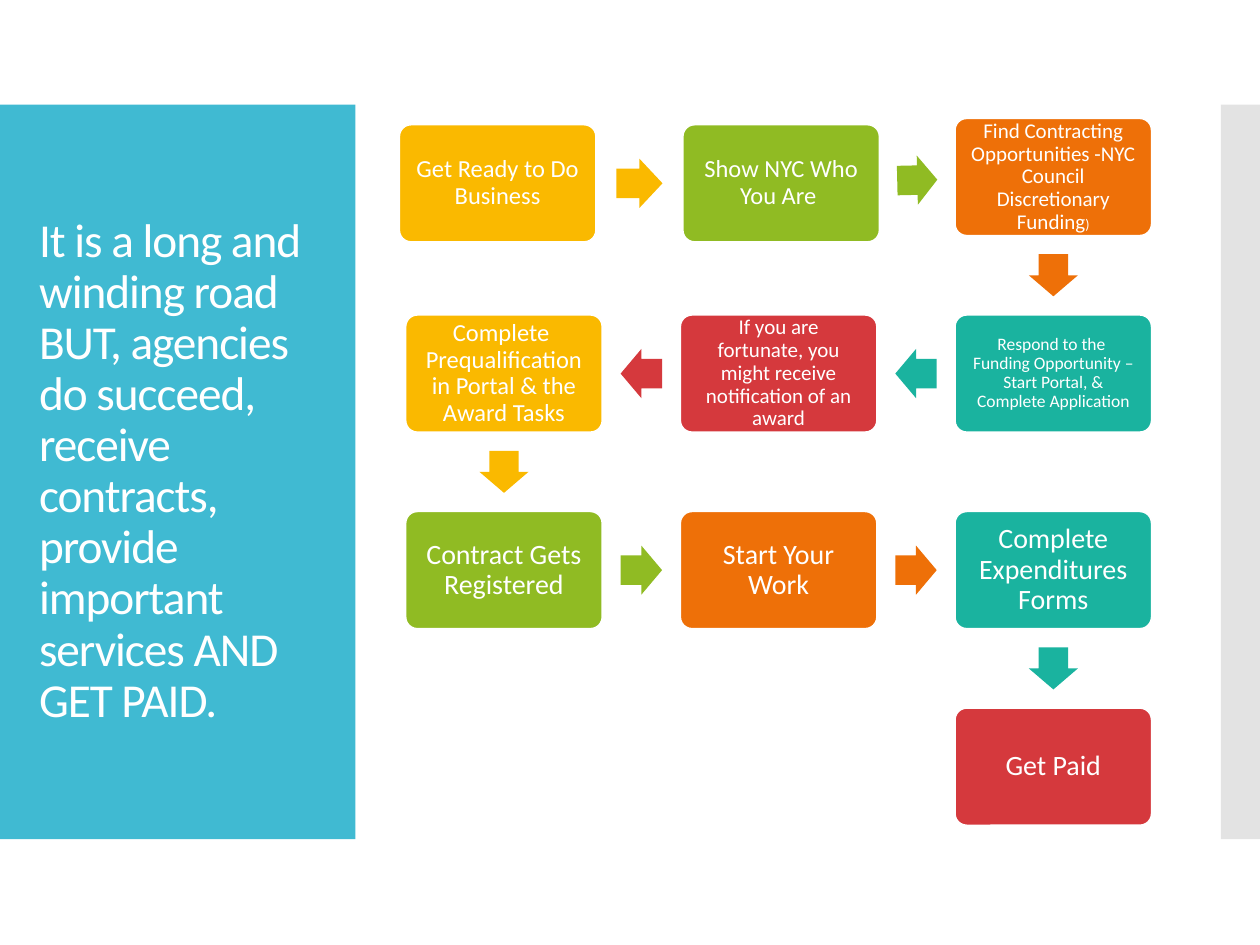
from math import atan2, degrees, hypot

from lxml.etree import SubElement
from pptx import Presentation
from pptx.dml.color import RGBColor
from pptx.enum.shapes import MSO_SHAPE as Shape
from pptx.enum.text import MSO_ANCHOR as Anchor, MSO_AUTO_SIZE as AutoSize, PP_ALIGN as Align
from pptx.oxml.ns import qn
from pptx.util import Inches, Pt

WHITE = RGBColor(0xFF, 0xFF, 0xFF)
GREY = RGBColor(0xC8, 0xC8, 0xC8)
BLUE = RGBColor(0x40, 0xBA, 0xD2)
YELLOW = RGBColor(0xFA, 0xB9, 0x00)
GREEN = RGBColor(0x90, 0xBB, 0x23)
ORANGE = RGBColor(0xEE, 0x70, 0x08)
TEAL = RGBColor(0x1A, 0xB3, 0x9F)
RED = RGBColor(0xD5, 0x39, 0x3D)

TITLE = ("It is a long and winding road BUT, agencies do succeed, receive contracts, "
         "provide important services AND GET PAID.")
# (column, row, nudge, fill, font size, text, small ending)
STEPS = [
    (0, 0, (-0.05, 0.05), YELLOW, 14, "Get Ready to Do Business", ""),
    (1, 0, (0.02, 0.05), GREEN, 14, "Show NYC Who You Are ", ""),
    (2, 0, (0, 0), ORANGE, 12,
     "Find Contracting Opportunities -NYC Council Discretionary Funding", ")"),
    (2, 1, (0, 0), TEAL, 10,
     "Respond to the  Funding Opportunity – Start Portal, & Complete Application", ""),
    (1, 1, (0, 0), RED, 12, "If you are fortunate, you might receive notification of an award", ""),
    (0, 1, (0, 0), YELLOW, 14, "Complete  Prequalification in Portal & the Award Tasks", ""),
    (0, 2, (0, 0), GREEN, 16, "Contract Gets Registered", ""),
    (1, 2, (0, 0), ORANGE, 16, "Start Your Work", ""),
    (2, 2, (0, 0), TEAL, 16, "Complete Expenditures Forms", ""),
    (2, 3, (0, 0), RED, 16, "Get Paid", ""),
]
GRID_LEFT, GRID_TOP = 3.22, 0.94
COLUMN_STEP, ROW_STEP = 2.18, 1.56
BOX_WIDTH, BOX_HEIGHT = 1.56, 0.93
ARROW_SHARE, ARROW_HEIGHT = 0.53, 0.39
BAND_TOP, BAND_HEIGHT = 0.83, 5.83


def write(frame, text, size, align=Align.LEFT, spacing=None, ending=""):
    """Fill a text frame with one white paragraph."""
    frame.word_wrap = True
    frame.auto_size = AutoSize.NONE
    frame.vertical_anchor = Anchor.MIDDLE
    para = frame.paragraphs[0]
    para.alignment = align
    para.line_spacing = 0.9
    for words, points in ((text, size), (ending, 8)):
        if words:
            span = para.add_run()
            span.text = words
            span.font.name = "Calibri"
            span.font.size = Pt(points)
            span.font.color.rgb = WHITE
            if spacing is not None:
                span.font._element.set("spc", str(spacing))


def add_block(page, kind, left, top, width, height, fill):
    """Add a flat filled shape without outline."""
    block = page.shapes.add_shape(kind, *map(Inches, (left, top, width, height)))
    block.shadow.inherit = False
    block.fill.solid()
    block.fill.fore_color.rgb = fill
    block.line.fill.background()
    return block


def add_step(page, center, fill, size, text, ending):
    """Add one rounded step box around its centre."""
    box = add_block(page, Shape.ROUNDED_RECTANGLE, center[0] - BOX_WIDTH / 2,
                    center[1] - BOX_HEIGHT / 2, BOX_WIDTH, BOX_HEIGHT, fill)
    box.adjustments[0] = 0.1
    box.line.color.rgb = WHITE
    box.line.width = Pt(0.85)
    frame = box.text_frame
    inset = Inches(0.03) + Pt(size * 0.3)
    frame.margin_left = frame.margin_right = frame.margin_top = frame.margin_bottom = inset
    write(frame, text, size, align=Align.CENTER, ending=ending)


def add_arrow(page, start, end, fill):
    """Add a block arrow midway between two step centres."""
    across, down = end[0] - start[0], end[1] - start[1]
    side = BOX_WIDTH if abs(across) > abs(down) else BOX_HEIGHT
    width = ARROW_SHARE * (hypot(across, down) - side)
    arrow = add_block(page, Shape.RIGHT_ARROW, (start[0] + end[0] - width) / 2,
                      (start[1] + end[1] - ARROW_HEIGHT) / 2, width, ARROW_HEIGHT, fill)
    arrow.adjustments[0] = 0.6
    arrow.adjustments[1] = 0.5
    arrow.rotation = degrees(atan2(down, across)) % 360


def main():
    """Build the slide and save it."""
    deck = Presentation()
    deck.slide_width, deck.slide_height = Inches(10), Inches(7.5)
    page = deck.slides.add_slide(deck.slide_layouts[5])
    title = page.shapes.title

    add_block(page, Shape.RECTANGLE, 0, BAND_TOP, 2.82, BAND_HEIGHT, BLUE)
    edge = add_block(page, Shape.RECTANGLE, 9.69, BAND_TOP, 0.31, BAND_HEIGHT, GREY)
    color = edge._element.spPr.find(qn("a:solidFill"))[0]
    SubElement(color, qn("a:alpha")).set("val", "50000")

    title.left, title.top, title.width, title.height = map(Inches, (0.21, 1.23, 2.42, 5.03))
    write(title.text_frame, TITLE, 27, spacing=-60)
    page.shapes._spTree.append(title._element)

    centers = [(GRID_LEFT + column * COLUMN_STEP + nudge[0] + BOX_WIDTH / 2,
                GRID_TOP + row * ROW_STEP + nudge[1] + BOX_HEIGHT / 2)
               for column, row, nudge, *_ in STEPS]
    for center, (*_, fill, size, text, ending) in zip(centers, STEPS):
        add_step(page, center, fill, size, text, ending)
    for start, end, step in zip(centers, centers[1:], STEPS):
        add_arrow(page, start, end, step[3])

    deck.save("out.pptx")


if __name__ == "__main__":
    main()
